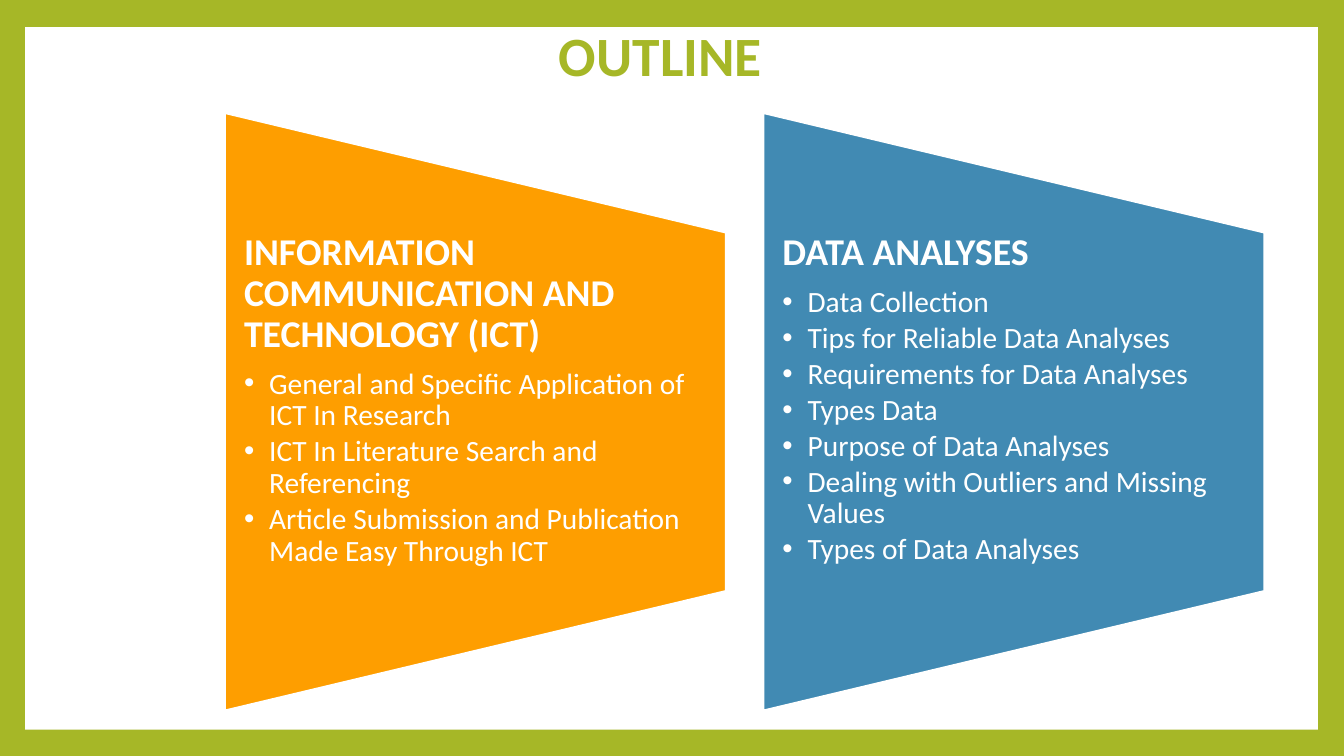
import pptx
import pptx.util
import pptx.dml.color
import pptx.enum.shapes
import pptx.enum.text
import pptx.oxml.ns
import lxml.etree

Inches = pptx.util.Inches
Pt = pptx.util.Pt
Shape = pptx.enum.shapes.MSO_SHAPE
Align = pptx.enum.text.PP_ALIGN
Anchor = pptx.enum.text.MSO_ANCHOR
Fit = pptx.enum.text.MSO_AUTO_SIZE
qn = pptx.oxml.ns.qn

hues = {"green": "A6B727", "white": "FFFFFF", "gold": "FE9E00", "blue": "418AB3"}

panels = [
    ("gold", "INFORMATION COMMUNICATION AND TECHNOLOGY (ICT)", [
        "General and Specific Application of ICT In Research",
        "ICT In Literature Search and Referencing",
        "Article Submission and Publication Made Easy Through ICT",
    ]),
    ("blue", "DATA ANALYSES", [
        "Data Collection",
        "Tips for Reliable Data Analyses",
        "Requirements for Data Analyses",
        "Types Data",
        "Purpose of Data Analyses",
        "Dealing with Outliers and Missing Values",
        "Types of Data Analyses",
    ]),
]


def rgb(name):
    return pptx.dml.color.RGBColor.from_string(hues[name])


def style(para, size, hue, bold):
    para.line_spacing = 0.9
    para.space_before = Pt(0)
    para.font.name = "Calibri"
    para.font.size = Pt(size)
    para.font.bold = bold
    para.font.color.rgb = rgb(hue)


deck = pptx.Presentation()
deck.slide_width = Inches(13.33)
deck.slide_height = Inches(7.5)
slide = deck.slides.add_slide(deck.slide_layouts[3])
slide.background.fill.solid()
slide.background.fill.fore_color.rgb = rgb("green")
title, *bodies = slide.placeholders

page = slide.shapes.add_shape(
    Shape.RECTANGLE, Inches(0.25), Inches(0.27), Inches(12.82), Inches(6.97))
page.shadow.inherit = False
page.fill.solid()
page.fill.fore_color.rgb = rgb("white")
page.line.fill.background()
title._element.addprevious(page._element)

title.left, title.top = Inches(0.55), Inches(0.2)
title.width, title.height = Inches(12), Inches(0.76)
title.text_frame.text = "OUTLINE"
title.text_frame.auto_size = Fit.NONE
title.text_frame.vertical_anchor = Anchor.MIDDLE
head = title.text_frame.paragraphs[0]
head.alignment = Align.CENTER
style(head, 39.6, "green", True)

wide, tall = 4.97, 5.93
for i, (hue, topic, items) in enumerate(panels):
    left = 2.23 + 5.34 * i
    panel = slide.shapes.add_shape(
        Shape.FLOWCHART_MANUAL_OPERATION,
        Inches(left - (tall - wide) / 2), Inches(1.6), Inches(tall), Inches(wide))
    panel.rotation = 270
    panel.shadow.inherit = False
    panel.fill.solid()
    panel.fill.fore_color.rgb = rgb(hue)
    panel.line.color.rgb = rgb("white")
    panel.line.width = Pt(1.5)

    body = bodies[i]
    body._element.addprevious(panel._element)
    body.left, body.top = Inches(left), Inches(2.31)
    body.width, body.height = Inches(wide), Inches(3.56)
    frame = body.text_frame
    frame.auto_size = Fit.NONE
    frame.word_wrap = True
    frame.vertical_anchor = Anchor.TOP
    frame.margin_left = frame.margin_right = Inches(0.19)
    frame.margin_top = frame.margin_bottom = 0
    frame.text = "\n".join([topic] + items)
    for n, para in enumerate(frame.paragraphs):
        props = para._p.get_or_add_pPr()
        para.alignment = Align.LEFT
        para.line_spacing = 0.9
        para.space_before = Pt(0)
        para.space_after = Pt(3 if n else 9.5)
        if n:
            para.level = 1
            props.set("marL", str(Inches(0.25)))
            props.set("indent", str(Inches(-0.25)))
            lxml.etree.SubElement(props, qn("a:buFont")).set("typeface", "Arial")
            lxml.etree.SubElement(props, qn("a:buChar")).set("char", "•")
            style(para, 21, "white", False)
        else:
            props.set("marL", "0")
            props.set("indent", "0")
            lxml.etree.SubElement(props, qn("a:buNone"))
            style(para, 27, "white", True)

deck.save("out.pptx")
